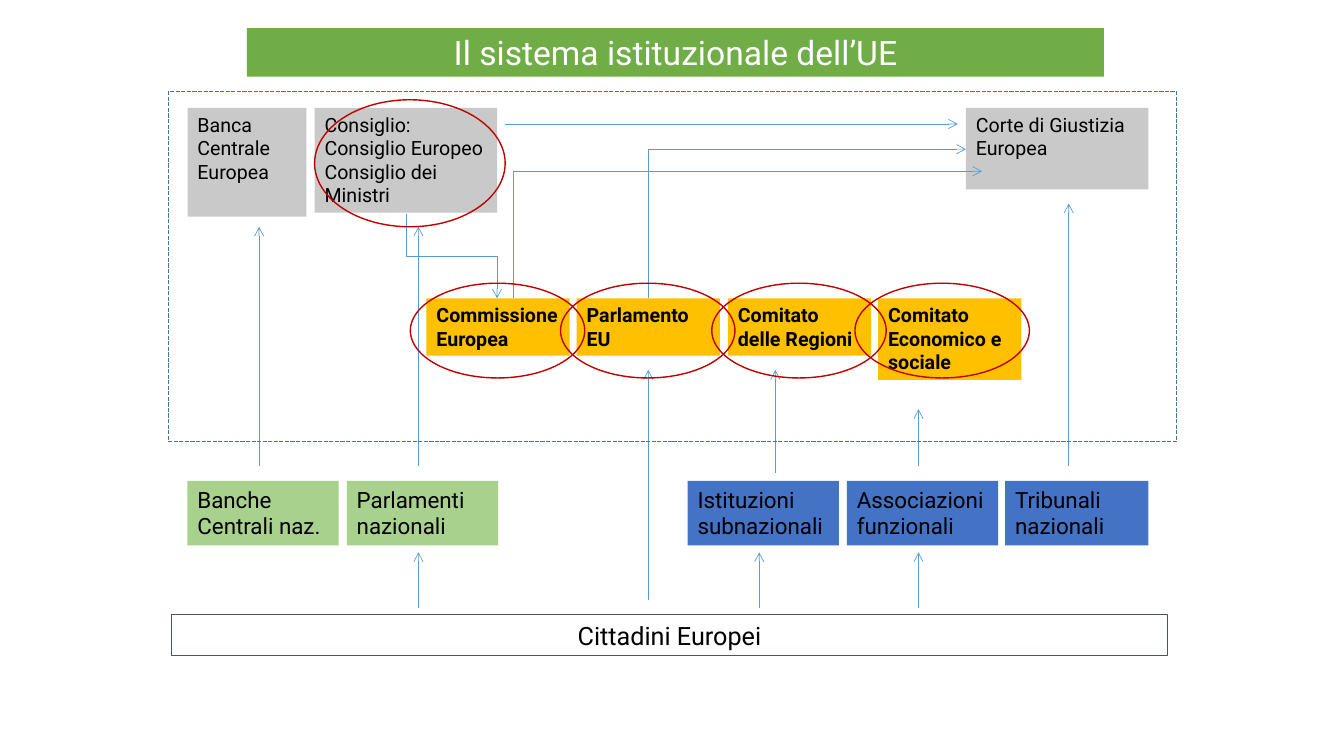
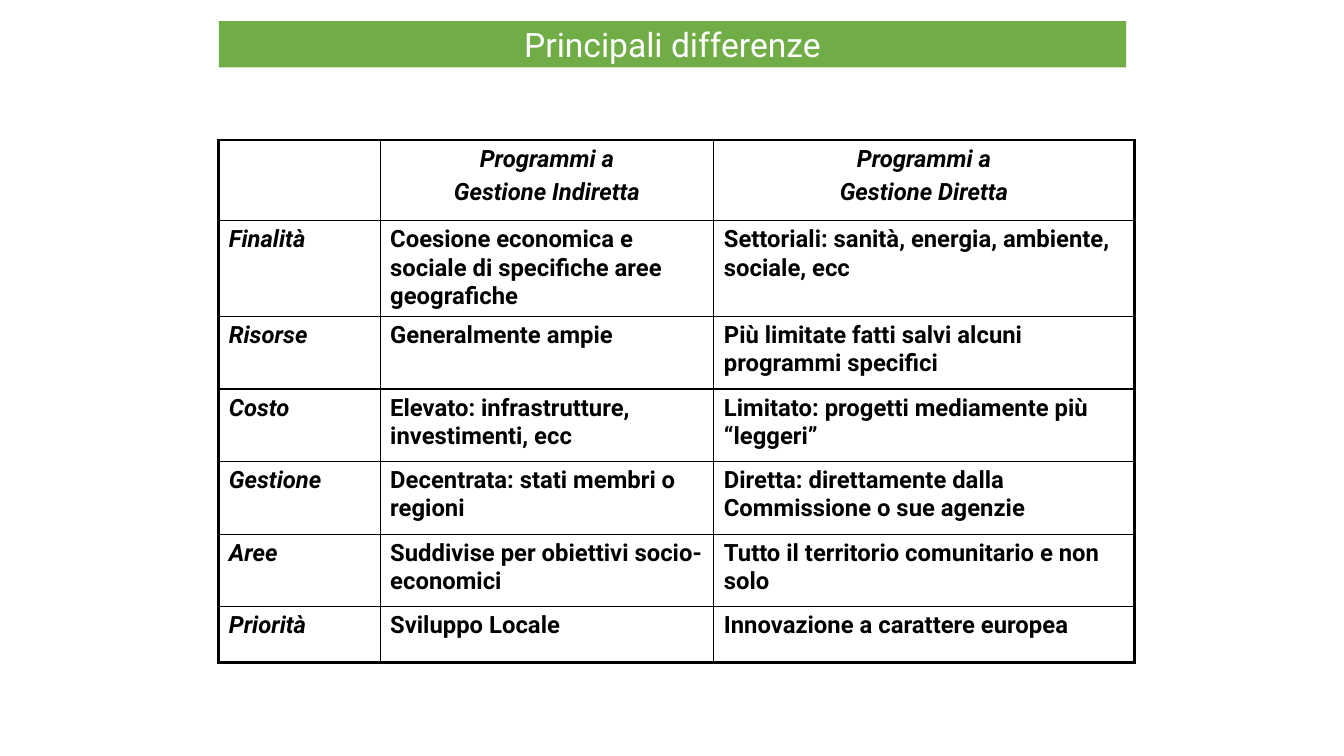
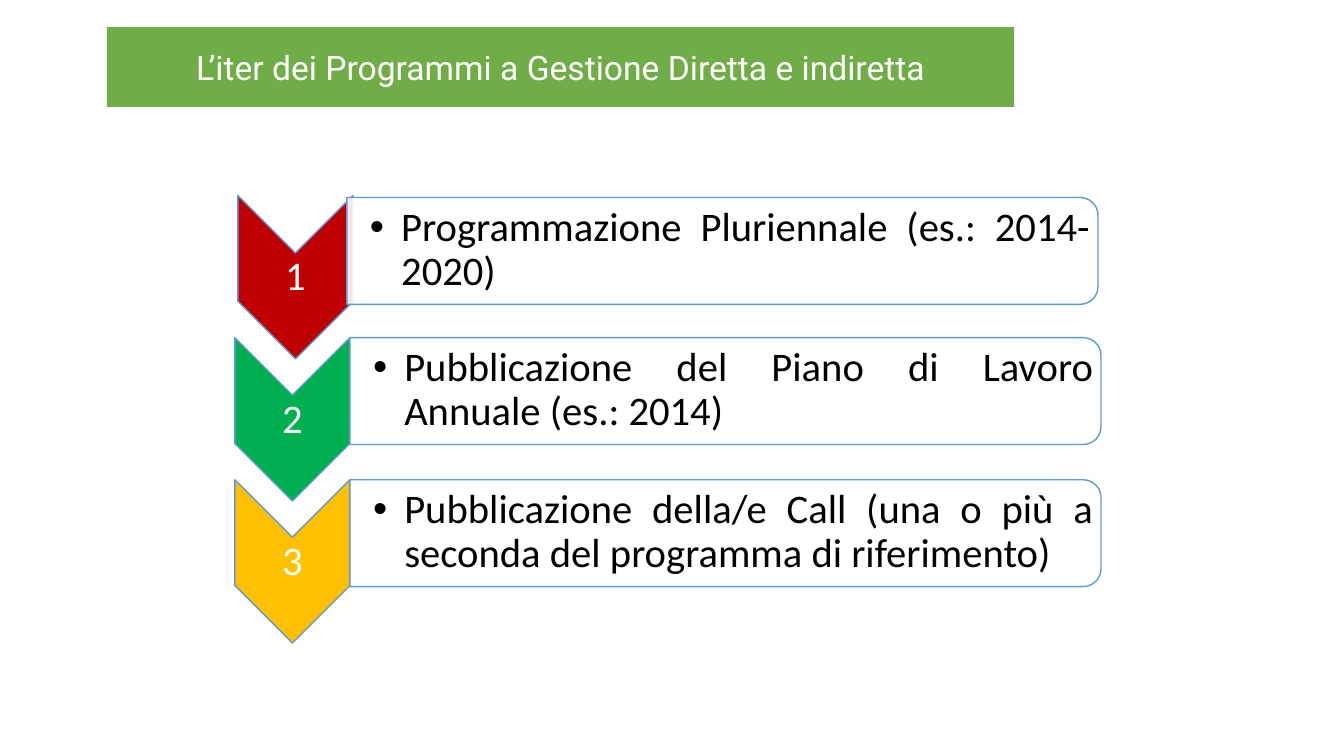
from lxml import etree
from pptx import Presentation
from pptx.dml.color import RGBColor
from pptx.enum.dml import MSO_LINE
from pptx.enum.shapes import MSO_CONNECTOR, MSO_SHAPE
from pptx.enum.text import MSO_ANCHOR, PP_ALIGN
from pptx.oxml.ns import qn
from pptx.util import Inches, Pt

# Shared palette and fonts
GREEN, PALE_GREEN, GREY, AMBER, BLUE = "70AD47", "A9D18E", "C9C9C9", "FFC000", "4472C4"
RED, BLACK, WHITE, ARROW_BLUE = "C00000", "000000", "FFFFFF", "5B9BD5"
BODY_FONT, STEP_FONT = "Roboto", "Calibri"


def rgb(value):
    return RGBColor.from_string(value)


def sub(parent, tag, **attributes):
    return etree.SubElement(parent, qn(tag), {k: str(v) for k, v in attributes.items()})


def within(box, x, y, width, height):
    """Place a part by its offset from the corner of a region."""
    return box[0] + x, box[1] + y, width, height


def style_text(frame, size, color=BLACK, font=BODY_FONT, bold=False, italic=False,
               align=PP_ALIGN.LEFT):
    for para in frame.paragraphs:
        para.alignment = align
        for span in para.runs:
            span.font.name, span.font.size = font, Pt(size)
            span.font.bold, span.font.italic = bold, italic
            span.font.color.rgb = rgb(color)


def add_figure(page, kind, box, fill=None, line=None, weight=1.0):
    shape = page.shapes.add_shape(kind, *map(Inches, box))
    shape.shadow.inherit = False
    if fill:
        shape.fill.solid()
        shape.fill.fore_color.rgb = rgb(fill)
    else:
        shape.fill.background()
    if line:
        shape.line.color.rgb = rgb(line)
        shape.line.width = Pt(weight)
    else:
        shape.line.fill.background()
    return shape


def add_label(page, box, text, size, fill=None, line=None, weight=0.75,
              anchor=MSO_ANCHOR.TOP, **style):
    shape = add_figure(page, MSO_SHAPE.RECTANGLE, box, fill, line, weight)
    frame = shape.text_frame
    frame.word_wrap = True
    frame.vertical_anchor = anchor
    frame.text = text
    style_text(frame, size, **style)


def add_title(page, box, text):
    add_label(page, box, text, 24, fill=GREEN, color=WHITE,
              anchor=MSO_ANCHOR.MIDDLE, align=PP_ALIGN.CENTER)


# Connectors
def finish_arrow(connector):
    connector.line.color.rgb = rgb(ARROW_BLUE)
    connector.line.width = Pt(0.5)
    properties = connector._element.spPr
    sub(properties.find(qn("a:ln")), "a:tailEnd", type="arrow")
    sub(properties, "a:effectLst")


def add_arrow(page, box, start, end):
    points = [box[i % 2] + value for i, value in enumerate(start + end)]
    finish_arrow(page.shapes.add_connector(MSO_CONNECTOR.STRAIGHT, *map(Inches, points)))


def add_elbow(page, box, start, end, preset):
    """Elbow that leaves vertically and runs to the right."""
    run, rise = end[0] - start[0], start[1] - end[1]
    width, height = abs(rise), run
    left = box[0] + (start[0] + end[0] - width) / 2
    top = box[1] + (start[1] + end[1] - height) / 2
    connector = page.shapes.add_connector(
        MSO_CONNECTOR.ELBOW, *map(Inches, (left, top, left + width, top + height)))
    properties = connector._element.spPr
    properties.find(qn("a:prstGeom")).set("prst", preset)
    transform = properties.find(qn("a:xfrm"))
    transform.set("rot", str((90 if rise > 0 else 270) * 60000))
    transform.set("flipH", "1")
    if rise > 0:
        transform.set("flipV", "1")
    finish_arrow(connector)


# Slide 1: regions of the institutional diagram
def draw_institutions(page, box):
    for x, width, height, text in (
            (0.19, 1.18, 1.08, "Banca Centrale Europea"),
            (1.45, 1.81, 1.04, "Consiglio:\nConsiglio Europeo\nConsiglio dei Ministri"),
            (7.91, 1.81, 0.81, "Corte di Giustizia Europea")):
        add_label(page, within(box, x, 0.16, width, height), text, 14, fill=GREY)
    for x, height, text in (
            (2.56, 0.57, "Commissione\nEuropea"),
            (4.05, 0.57, "Parlamento\nEU"),
            (5.55, 0.57, "Comitato delle Regioni"),
            (7.04, 0.81, "Comitato Economico e sociale")):
        add_label(page, within(box, x, 2.05, 1.42, height), text, 14, fill=AMBER, bold=True)

    add_arrow(page, box, (3.34, 0.32), (7.83, 0.32))
    add_elbow(page, box, (2.36, 1.21), (3.26, 2.05), "bentConnector3")
    add_elbow(page, box, (4.76, 2.05), (7.91, 0.57), "bentConnector2")
    add_elbow(page, box, (3.42, 2.05), (8.07, 0.79), "bentConnector2")

    border = add_figure(page, MSO_SHAPE.RECTANGLE, box, line="43739E")
    border.line.dash_style = MSO_LINE.SQUARE_DOT
    rings = [(1.45, 0.08, 1.89, 1.26)]
    rings += [(x, 1.9, 1.73, 0.94) for x in (2.4, 3.89, 5.39, 6.81)]
    for ring in rings:
        add_figure(page, MSO_SHAPE.OVAL, within(box, *ring), line=RED)


def draw_national_bodies(page, box):
    for x, width, fill, text, arrow_x, start, end in (
            (0, 1.5, PALE_GREEN, "Banche Centrali naz.", 0.71, -0.15, -2.52),
            (1.58, 1.5, PALE_GREEN, "Parlamenti\nnazionali", 2.29, -0.15, -2.52),
            (4.96, 1.5, BLUE, "Istituzioni\nsubnazionali", 5.83, -0.08, -1.1),
            (6.54, 1.5, BLUE, "Associazioni funzionali", 7.25, -0.15, -0.71),
            (8.11, 1.42, BLUE, "Tribunali nazionali", 8.74, -0.15, -2.75)):
        add_label(page, within(box, x, 0, width, box[3]), text, 16, fill=fill)
        add_arrow(page, box, (arrow_x, start), (arrow_x, end))


def draw_citizens(page, box):
    add_label(page, box, "Cittadini Europei", 18, line="44546A", align=PP_ALIGN.CENTER)
    for x, start, end in ((2.45, -0.07, -0.62), (5.83, -0.07, -0.62),
                          (7.41, -0.07, -0.62), (4.73, -0.15, -2.43)):
        add_arrow(page, box, (x, start), (x, end))


# Slide 2: comparison table
COLUMNS = (1.6, 3.31, 4.17)
HEIGHTS = (0.8, 0.95, 0.72, 0.72, 0.72, 0.72, 0.55)
COMPARISON = (
    ("", "Programmi a\nGestione Indiretta", "Programmi a\nGestione Diretta"),
    ("Finalità", "Coesione economica e sociale di specifiche aree geografiche",
     "Settoriali: sanità, energia, ambiente, sociale, ecc"),
    ("Risorse", "Generalmente ampie", "Più limitate fatti salvi alcuni programmi specifici"),
    ("Costo", "Elevato: infrastrutture, investimenti, ecc",
     "Limitato: progetti mediamente più “leggeri”"),
    ("Gestione", "Decentrata: stati membri o regioni",
     "Diretta: direttamente dalla Commissione o sue agenzie"),
    ("Aree", "Suddivise per obiettivi socio-economici",
     "Tutto il territorio comunitario e non solo"),
    ("Priorità", "Sviluppo Locale", "Innovazione a carattere europea"),
)


def set_borders(cell, outer_sides):
    """Thick lines on the outer sides, thin ones elsewhere."""
    properties = cell._tc.get_or_add_tcPr()
    for position, (side, outer) in enumerate(zip("LRTB", outer_sides)):
        line = etree.Element(qn(f"a:ln{side}"), w=str(Pt(2.25 if outer else 1)))
        sub(sub(line, "a:solidFill"), "a:srgbClr", val=BLACK)
        properties.insert(position, line)


def draw_comparison(page, box):
    last_row, last_column = len(HEIGHTS) - 1, len(COLUMNS) - 1
    table = page.shapes.add_table(len(HEIGHTS), len(COLUMNS), *map(Inches, box)).table
    table.first_row = table.horz_banding = False
    for column, width in zip(table.columns, COLUMNS):
        column.width = Inches(width)
    for r, (height, texts) in enumerate(zip(HEIGHTS, COMPARISON)):
        table.rows[r].height = Inches(height)
        for c, text in enumerate(texts):
            cell = table.cell(r, c)
            cell.fill.background()
            set_borders(cell, (c == 0, c == last_column, r == 0, r == last_row))
            cell.text_frame.text = text
            style_text(cell.text_frame, 17, bold=True, italic=r == 0 or c == 0,
                       align=PP_ALIGN.LEFT if r else PP_ALIGN.CENTER)
            for para in cell.text_frame.paragraphs[1:]:
                para.space_before = Pt(3.4)


# Slide 3: numbered steps
def add_step_text(page, box, text, color, align, left_inset=0.02, bullet=False):
    frame = page.shapes.add_textbox(*map(Inches, box)).text_frame
    frame.word_wrap = True
    frame.vertical_anchor = MSO_ANCHOR.MIDDLE
    frame.margin_left = Inches(left_inset)
    frame.margin_right = frame.margin_top = frame.margin_bottom = Inches(0.02)
    frame.text = text
    para = frame.paragraphs[0]
    para.line_spacing = 0.9
    if bullet:
        para.level = 1
        properties = para._p.get_or_add_pPr()
        properties.set("marL", str(Inches(0.31)))
        properties.set("indent", str(-Inches(0.31)))
        sub(properties, "a:buFont", typeface="Arial")
        sub(properties, "a:buChar", char="•")
    style_text(frame, 29, color=color, font=STEP_FONT, align=align)


def add_turned(page, kind, box, fill):
    """Shape turned clockwise by a quarter, filling the box as seen."""
    left, top, width, height = box
    shift = (width - height) / 2
    shape = add_figure(page, kind, (left + shift, top - shift, height, width),
                       fill, ARROW_BLUE)
    shape.rotation = 90
    return shape


def draw_step(page, box, number, text, color, panel_x, panel_y):
    add_turned(page, MSO_SHAPE.CHEVRON, within(box, 0, 0, 1.14, 1.62), color)
    add_step_text(page, within(box, 0, 0.57, 1.14, 0.49), str(number), WHITE,
                  PP_ALIGN.CENTER)
    panel_box = within(box, panel_x, panel_y, 7.45, 1.06)
    panel = add_turned(page, MSO_SHAPE.ROUND_2_SAME_RECTANGLE, panel_box, WHITE)
    tint = panel._element.spPr.find(qn("a:solidFill")).find(qn("a:srgbClr"))
    sub(tint, "a:alpha", val=90000)
    add_step_text(page, within(panel_box, 0, 0.05, 7.4, 0.95), text, BLACK,
                  PP_ALIGN.JUSTIFY, left_inset=0.23, bullet=True)


def main():
    deck = Presentation()
    deck.slide_width, deck.slide_height = Inches(13.33), Inches(7.5)
    system, differences, process = (
        deck.slides.add_slide(deck.slide_layouts[6]) for _ in range(3))

    add_title(system, (2.45, 0.28, 8.5, 0.48), "Il sistema istituzionale dell’UE")
    draw_citizens(system, (1.7, 6.1, 9.88, 0.4))
    draw_national_bodies(system, (1.86, 4.77, 9.53, 0.64))
    draw_institutions(system, (1.67, 0.91, 10, 3.47))

    draw_comparison(differences, (2.17, 1.39, sum(COLUMNS), sum(HEIGHTS)))
    add_title(differences, (2.17, 0.21, 9, 0.46), "Principali differenze")

    add_title(process, (1.06, 0.27, 9, 0.79),
              "L’iter dei Programmi a Gestione Diretta e indiretta")
    steps = (
        (2.36, "Programmazione Pluriennale (es.: 2014-2020)", RED, 1.08, 0.02),
        (2.33, "Pubblicazione del Piano di Lavoro Annuale (es.: 2014)", "00B050", 1.14, 0),
        (2.33, "Pubblicazione della/e Call (una o più a seconda del programma di riferimento)",
         AMBER, 1.14, 0),
    )
    for i, (left, *step) in enumerate(steps):
        draw_step(process, (left, 1.94 + 1.41 * i, 8.6, 1.62), i + 1, *step)

    deck.save("out.pptx")


if __name__ == "__main__":
    main()
